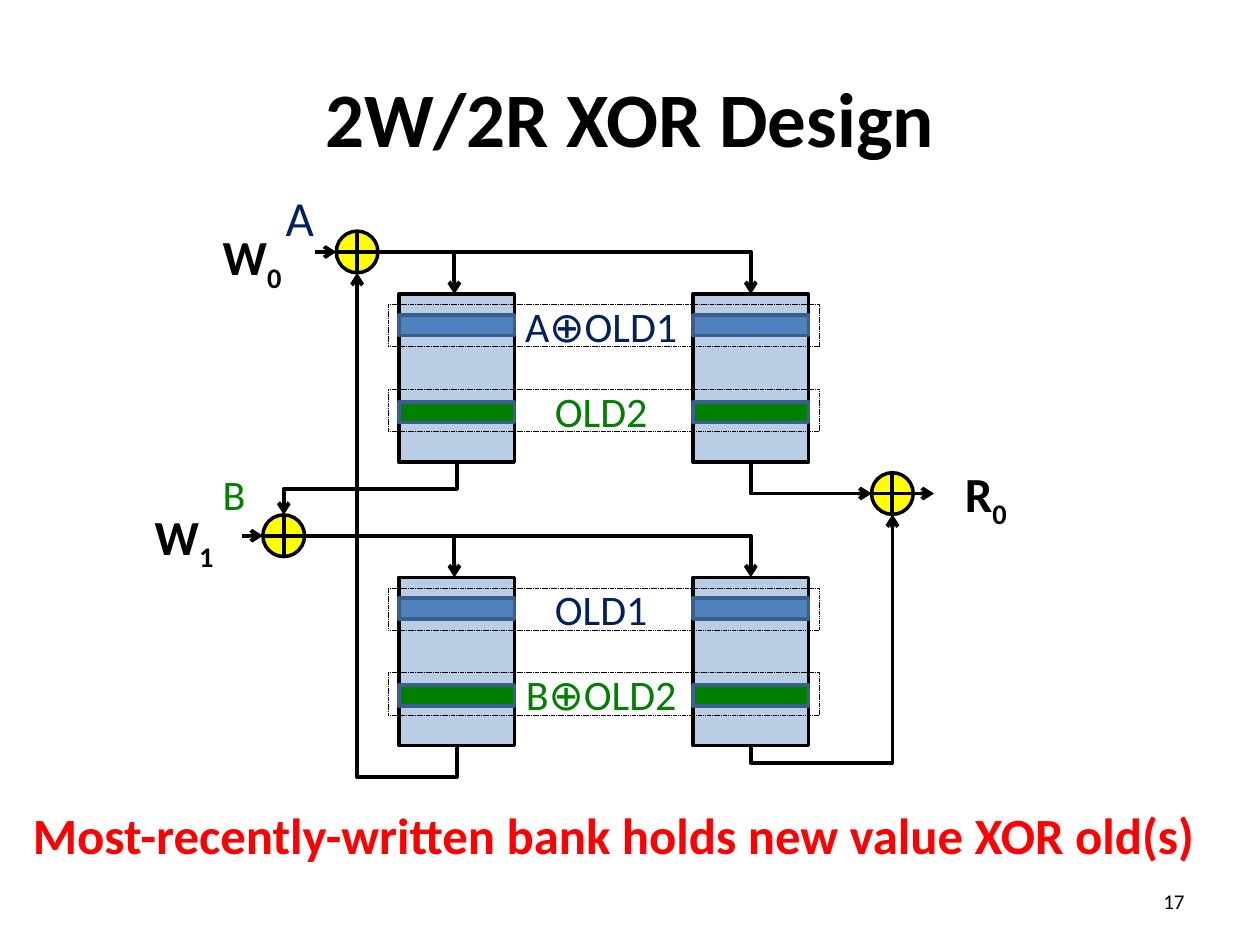
from dataclasses import dataclass

from lxml.etree import SubElement
from pptx import Presentation
from pptx.dml.color import RGBColor as Rgb
from pptx.enum.dml import MSO_LINE as Dash
from pptx.enum.shapes import MSO_CONNECTOR as Wire, MSO_SHAPE as Preset
from pptx.enum.text import MSO_ANCHOR as Anchor, PP_ALIGN as Align
from pptx.oxml.ns import qn
from pptx.util import Cm, Pt


@dataclass(frozen=True)
class Theme:
    font: str = "Calibri"
    black: str = "000000"
    navy: str = "002060"
    green: str = "008000"
    red: str = "FF0000"
    yellow: str = "FFFF00"
    bank: str = "B9CDE5"
    blue: str = "4F81BD"
    edge: str = "3A5F8C"
    title: int = 44
    banner: int = 29
    port: int = 28
    value: int = 24
    number: int = 12
    outline: float = 2
    wire: float = 2.25
    hairline: float = 0.25


class Sketch:
    """Draws styled elements on one page; all lengths are centimetres."""

    def __init__(self, page, theme):
        self.page, self.theme = page, theme

    def text(self, words, left, top, width, height, size, color, bold=False,
             align=Align.LEFT, anchor=Anchor.TOP, subscript=""):
        box = self.page.shapes.add_textbox(Cm(left), Cm(top), Cm(width), Cm(height))
        frame = box.text_frame
        frame.word_wrap = False
        frame.vertical_anchor = anchor
        para = frame.paragraphs[0]
        para.alignment = align
        font = para.font
        font.name, font.size, font.bold = self.theme.font, Pt(size), bold
        font.color.rgb = Rgb.from_string(color)
        para.add_run().text = words
        if subscript:
            span = para.add_run()
            span.text = subscript
            span.font._element.set("baseline", "-25000")

    def shape(self, preset, left, top, width, height, fill=None, line=None,
              weight=None, dash=None):
        box = self.page.shapes.add_shape(preset, Cm(left), Cm(top), Cm(width), Cm(height))
        box.shadow.inherit = False
        if fill:
            box.fill.solid()
            box.fill.fore_color.rgb = Rgb.from_string(fill)
        else:
            box.fill.background()
        box.line.color.rgb = Rgb.from_string(line or self.theme.black)
        box.line.width = Pt(weight or self.theme.outline)
        if dash:
            box.line.dash_style = dash

    def line(self, start, end, arrow=True, kind=Wire.STRAIGHT):
        wire = self.page.shapes.add_connector(kind, *map(Cm, start + end))
        wire.line.color.rgb = Rgb.from_string(self.theme.black)
        wire.line.width = Pt(self.theme.wire)
        if arrow:
            SubElement(wire.line._get_or_add_ln(), qn("a:tailEnd"), type="arrow")
        SubElement(wire._element.spPr, qn("a:effectLst"))
        return wire

    def elbow(self, start, end, turn=0, flips="", bend=None):
        """One corner, or two corners with the middle leg at the share `bend`."""
        wire = self.line(start, end, kind=Wire.ELBOW)
        width, height = abs(end[0] - start[0]), abs(end[1] - start[1])
        if turn:
            width, height = height, width
        wire.left = Cm((start[0] + end[0] - width) / 2)
        wire.top = Cm((start[1] + end[1] - height) / 2)
        wire.width, wire.height = Cm(width), Cm(height)
        frame = wire._element.spPr.find(qn("a:xfrm"))
        frame.set("rot", str(turn * 60000))
        frame.set("flipH", str(int("h" in flips)))
        frame.set("flipV", str(int("v" in flips)))
        geometry = wire._element.spPr.find(qn("a:prstGeom"))
        if bend is None:
            geometry.set("prst", "bentConnector2")
        else:
            SubElement(geometry.find(qn("a:avLst")), qn("a:gd"),
                       name="adj1", fmla=f"val {round(bend * 100000)}")

    def xor(self, x, y, radius):
        self.shape(Preset.OVAL, x - radius, y - radius, 2 * radius, 2 * radius,
                   self.theme.yellow)
        self.line((x, y - radius), (x, y + radius), arrow=False)
        self.line((x + radius, y), (x - radius, y), arrow=False)


def main():
    theme = Theme()
    deck = Presentation()
    deck.slide_width, deck.slide_height = Cm(25.4), Cm(19.05)
    sketch = Sketch(deck.slides.add_slide(deck.slide_layouts[6]), theme)

    # Title and slide number
    sketch.text("2W/2R XOR Design", 1.27, 0.76, 22.86, 3.18, theme.title, theme.black,
                bold=True, align=Align.CENTER, anchor=Anchor.MIDDLE)
    sketch.text("17", 18.21, 17.65, 5.92, 1.02, theme.number, theme.black,
                align=Align.RIGHT, anchor=Anchor.MIDDLE)

    # Memory banks: two columns, two rows
    columns, rows = (8.04, 13.97), (5.93, 11.64)
    bank_width, bank_height = 2.33, 3.39
    for top in rows:
        for left in columns:
            sketch.shape(Preset.RECTANGLE, left, top, bank_width, bank_height, theme.bank)

    # XOR gates
    radius = 0.42
    write0, write1, read0 = (7.2, 5.08), (5.72, 10.8), (17.99, 9.95)
    for gate in (write0, write1, read0):
        sketch.xor(*gate, radius)

    # Write wires: input, tap to the left bank, branch to the right bank
    left_mid, right_mid = (left + bank_width / 2 for left in columns)
    for (x, y), top in zip((write0, write1), rows):
        sketch.line((x - 2 * radius, y), (x - radius, y))
        sketch.line((9.16, y), (9.16, top))
        sketch.elbow((x + radius, y), (right_mid, top))

    # Read wires and feedback between the rows
    upper, lower = (top + bank_height for top in rows)
    x, y = read0
    sketch.elbow((right_mid, upper), (x - radius, y), 270, "h")
    sketch.elbow((right_mid, lower), (x, y + radius), 90, "hv", bend=-0.075)
    sketch.line((x + radius, y), (x + 2 * radius, y))
    sketch.elbow((left_mid, lower), (write0[0], write0[1] + radius), 90, "h", bend=-0.067)
    sketch.elbow((left_mid, upper), (write1[0], write1[1] - radius), 90, bend=0.5)

    # Port names
    for name, index, left, top in (("W", "0", 4.24, 4.45), ("W", "1", 2.87, 10.08),
                                   ("R", "0", 19.2, 9.22)):
        sketch.text(name, left, top, 1.75, 1.45, theme.port, theme.black,
                    bold=True, subscript=index)

    # Stored words: strips in both banks, value between them, dashed frame
    words = ((0, 0.42, theme.blue, theme.navy, ("A⊕OLD1", "OLD1")),
             (1.71, 2.17, theme.green, theme.green, ("OLD2", "B⊕OLD2")))
    for shift, strip, fill, ink, values in words:
        for top, value in zip(rows, values):
            for left in columns:
                sketch.shape(Preset.RECTANGLE, left, top + strip, bank_width, 0.42,
                             fill, theme.edge)
            sketch.text(value, 10.24, top + shift, 3.76, 1.27, theme.value, ink,
                        align=Align.CENTER)
            sketch.shape(Preset.RECTANGLE, 7.83, top + shift + 0.21, 8.68, 0.85,
                         weight=theme.hairline, dash=Dash.SQUARE_DOT)

    # Written values
    sketch.text("A", 5.51, 3.66, 1.09, 1.45, theme.port, theme.navy)
    sketch.text("B", 4.24, 9.32, 0.97, 1.27, theme.value, theme.green)

    # Takeaway
    sketch.text("Most-recently-written bank holds new value XOR old(s)", 0, 16.08, 24.77,
                1.37, theme.banner, theme.red, bold=True, align=Align.CENTER)

    deck.save("out.pptx")


if __name__ == "__main__":
    main()
